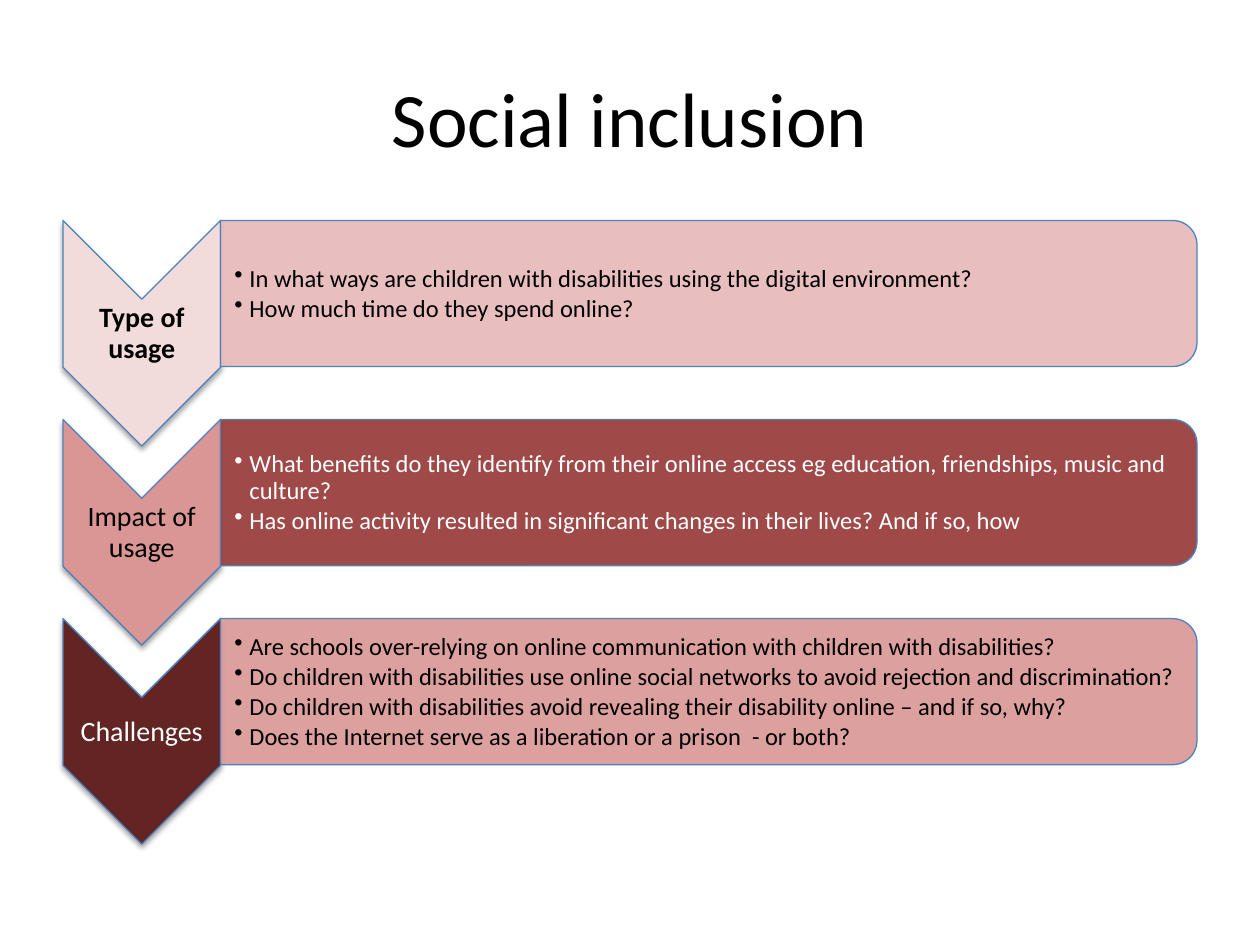
from dataclasses import dataclass

from lxml.etree import SubElement
from pptx import Presentation
from pptx.dml.color import RGBColor
from pptx.enum.shapes import MSO_SHAPE
from pptx.enum.text import MSO_ANCHOR, PP_ALIGN
from pptx.oxml.ns import qn
from pptx.shapes.autoshape import Shape
from pptx.slide import Slide
from pptx.text.text import TextFrame, _Paragraph
from pptx.util import Inches, Pt

FONT = "Calibri"
OUTLINE = "4F81BD"
BLACK = "000000"
WHITE = "FFFFFF"
LEFT, TOP, ROW_PITCH = 0.5, 1.75, 1.58
CHEVRON_WIDTH, CHEVRON_HEIGHT = 1.25, 1.79
PANEL_LEFT, PANEL_WIDTH, PANEL_HEIGHT = LEFT + CHEVRON_WIDTH, 7.75, 1.16


@dataclass
class Topic:
    label: str
    chevron_fill: str
    label_color: str
    panel_fill: str
    panel_color: str
    questions: list[str]
    bold: bool = False


TOPICS = [
    Topic("Type of usage", "F2DCDB", BLACK, "E6B9B8", BLACK, [
        "In what ways are children with disabilities using the digital environment?",
        "How much time do they spend online?",
    ], bold=True),
    Topic("Impact of usage", "D99694", BLACK, "953735", WHITE, [
        "What benefits do they identify from their online access eg education, friendships, music and culture?",
        "Has online activity resulted in significant changes in their lives? And if so, how",
    ]),
    Topic("Challenges", "632523", WHITE, "D99694", BLACK, [
        "Are schools over-relying on online communication with children with disabilities?",
        "Do children with disabilities use online social networks to avoid rejection and discrimination?",
        "Do children with disabilities avoid revealing their disability online – and if so, why?",
        "Does the Internet serve as a liberation or a prison  - or both?",
    ]),
]


def color(value: str) -> RGBColor:
    return RGBColor.from_string(value)


def add_turned_shape(slide: Slide, kind: MSO_SHAPE, left: float, top: float,
                     width: float, height: float, fill: str) -> Shape:
    shift = (width - height) / 2
    shape = slide.shapes.add_shape(kind, Inches(left + shift), Inches(top - shift),
                                   Inches(height), Inches(width))
    shape.rotation = 90
    shape.shadow.inherit = False
    shape.fill.solid()
    shape.fill.fore_color.rgb = color(fill)
    shape.line.color.rgb = color(OUTLINE)
    shape.line.width = Pt(0.75)
    return shape


def add_shadow(shape: Shape) -> None:
    effects = shape._element.spPr.find(qn("a:effectLst"))
    shadow = SubElement(effects, qn("a:outerShdw"), blurRad=str(Pt(3.1)), dist=str(Pt(1.8)),
                        dir="5400000", rotWithShape="0")
    shade = SubElement(shadow, qn("a:srgbClr"), val=BLACK)
    SubElement(shade, qn("a:alpha"), val="35000")


def make_translucent(shape: Shape, percent: int) -> None:
    fill = shape._element.spPr.find(qn("a:solidFill"))
    SubElement(fill[0], qn("a:alpha"), val=str(percent * 1000))


def add_text_area(slide: Slide, left: float, top: float, width: float, height: float,
                  left_margin: float = 0.01) -> TextFrame:
    box = slide.shapes.add_textbox(Inches(left), Inches(top), Inches(width), Inches(height))
    frame = box.text_frame
    frame.word_wrap = True
    frame.vertical_anchor = MSO_ANCHOR.MIDDLE
    frame.margin_left = Inches(left_margin)
    frame.margin_top = frame.margin_right = frame.margin_bottom = Inches(0.01)
    return frame


def format_paragraph(paragraph: _Paragraph, size: int, text_color: str, gap: float) -> None:
    paragraph.font.name = FONT
    paragraph.font.size = Pt(size)
    paragraph.font.color.rgb = color(text_color)
    paragraph.line_spacing = 0.9
    paragraph.space_after = Pt(size * gap)


def add_bullet(paragraph: _Paragraph) -> None:
    paragraph.level = 1
    properties = paragraph._p.get_or_add_pPr()
    properties.set("marL", str(Inches(0.12)))
    properties.set("indent", str(Inches(-0.12)))
    SubElement(properties, qn("a:buChar"), char="•")
    properties.append(properties.find(qn("a:defRPr")))


def draw_topic(slide: Slide, topic: Topic, top: float) -> None:
    chevron = add_turned_shape(slide, MSO_SHAPE.CHEVRON, LEFT, top,
                               CHEVRON_WIDTH, CHEVRON_HEIGHT, topic.chevron_fill)
    add_shadow(chevron)
    label = add_text_area(slide, LEFT, top + 0.63, CHEVRON_WIDTH, 0.54).paragraphs[0]
    label.text = topic.label
    label.alignment = PP_ALIGN.CENTER
    format_paragraph(label, 16, topic.label_color, 0.35)
    label.font.bold = topic.bold

    panel = add_turned_shape(slide, MSO_SHAPE.ROUND_2_SAME_RECTANGLE, PANEL_LEFT, top,
                             PANEL_WIDTH, PANEL_HEIGHT, topic.panel_fill)
    make_translucent(panel, 90)
    frame = add_text_area(slide, PANEL_LEFT, top + 0.06, 7.69, 1.05, left_margin=0.11)
    frame.text = "\n".join(topic.questions)
    for paragraph in frame.paragraphs:
        format_paragraph(paragraph, 14, topic.panel_color, 0.15)
        add_bullet(paragraph)


def main() -> None:
    presentation = Presentation()
    presentation.slide_width = Inches(10)
    presentation.slide_height = Inches(7.5)
    slide = presentation.slides.add_slide(presentation.slide_layouts[5])

    title = slide.shapes.title
    title.left, title.top = Inches(0.5), Inches(0.3)
    title.width, title.height = Inches(9), Inches(1.25)
    title.text_frame.text = "Social inclusion"
    title.text_frame.vertical_anchor = MSO_ANCHOR.MIDDLE
    heading = title.text_frame.paragraphs[0]
    heading.alignment = PP_ALIGN.CENTER
    heading.font.name = FONT
    heading.font.size = Pt(44)
    heading.font.color.rgb = color(BLACK)

    for row, topic in enumerate(TOPICS):
        draw_topic(slide, topic, TOP + row * ROW_PITCH)

    presentation.save("out.pptx")


if __name__ == "__main__":
    main()
